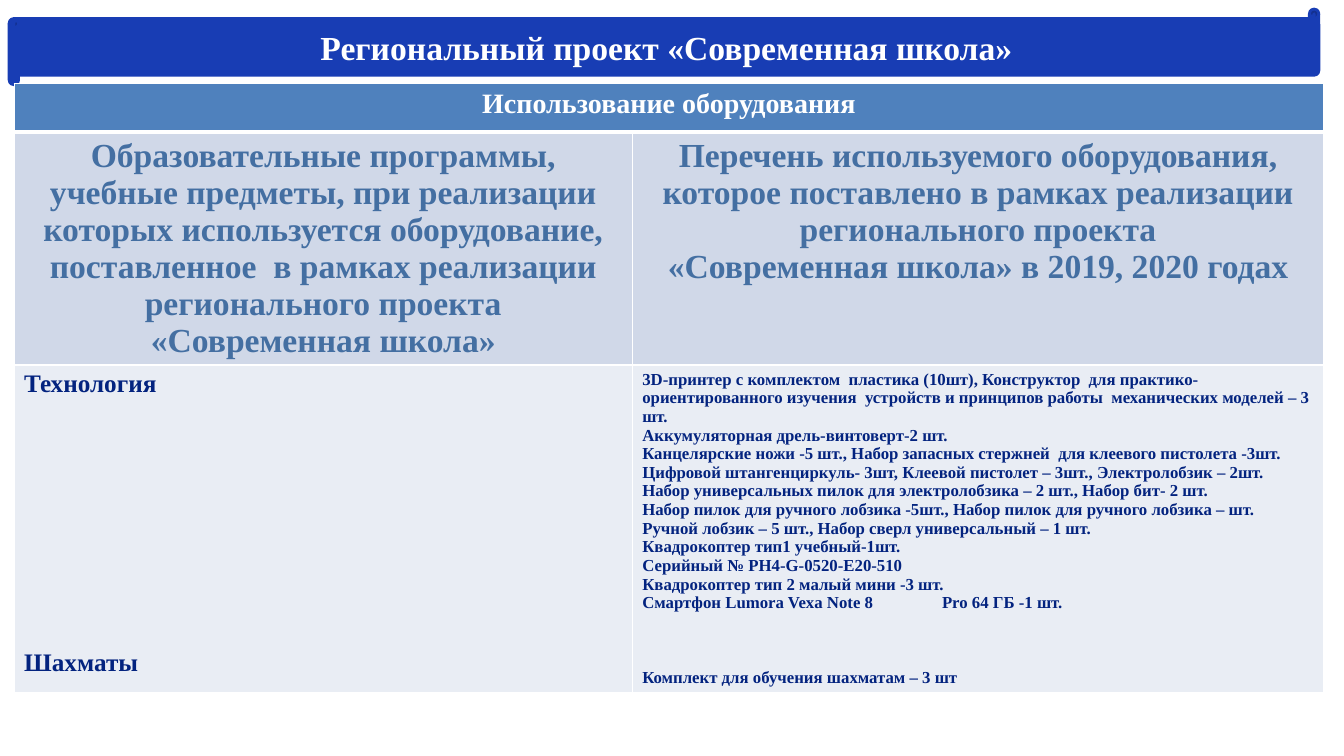
from lxml.etree import SubElement
from pptx import Presentation
from pptx.dml.color import RGBColor
from pptx.enum.shapes import MSO_SHAPE
from pptx.enum.text import MSO_ANCHOR, PP_ALIGN
from pptx.oxml import parse_xml
from pptx.oxml.ns import nsdecls, qn
from pptx.util import Inches, Pt


class Theme:
    font = "Times New Roman"
    banner, header, subheader, body = "183DB4", "4F81BD", "D0D8E8", "E9EDF4"
    white, heading_text, body_text = "FFFFFF", "446FA2", "03237F"
    title_size, header_size, subject_size, item_size = 24, 20, 18, 12


class SlideBuilder:
    """Lengths are percentages of the slide's width and height."""

    def __init__(self, prs, theme):
        self.prs, self.theme = prs, theme
        self.s = prs.slides.add_slide(prs.slide_layouts[6])

    def x(self, share):
        return int(self.prs.slide_width * share / 100)

    def y(self, share):
        return int(self.prs.slide_height * share / 100)

    def text(self, tf, lines, size, color, align=PP_ALIGN.LEFT):
        for i, line in enumerate(lines):
            p = tf.paragraphs[0] if i == 0 else tf.add_paragraph()
            p.text, p.alignment = line, align
            p.font.name, p.font.size, p.font.bold = self.theme.font, Pt(size), True
            p.font.color.rgb = RGBColor.from_string(color)

    def banner(self, left, top, width, height, title):
        t = self.theme
        sp = self.s.shapes.add_shape(MSO_SHAPE.HORIZONTAL_SCROLL, self.x(left),
                                     self.y(top), self.x(width), self.y(height))
        sp.shadow.inherit = False
        sp.fill.solid()
        sp.fill.fore_color.rgb = sp.line.color.rgb = RGBColor.from_string(t.banner)
        sp.line.width = Pt(2)
        sp.text_frame.vertical_anchor = MSO_ANCHOR.MIDDLE
        self.text(sp.text_frame, [title], t.title_size, t.white, PP_ALIGN.CENTER)

    def table(self, left, top, cols, rows):
        table = self.s.shapes.add_table(
            len(rows), len(cols), self.x(left), self.y(top),
            self.x(sum(cols)), self.y(sum(rows))).table
        for col, share in zip(table.columns, cols):
            col.width = self.x(share)
        for row, share in zip(table.rows, rows):
            row.height = self.y(share)
        return table

    def cell(self, cell, fill, bottom=1):
        cell.fill.solid()
        cell.fill.fore_color.rgb = RGBColor.from_string(fill)
        tc_pr = cell._tc.get_or_add_tcPr()
        for i, (side, width) in enumerate(zip("LRTB", (1, 1, 1, bottom))):
            tc_pr.insert(i, parse_xml(
                f'<a:ln{side} {nsdecls("a")} w="{Pt(width)}"><a:solidFill>'
                f'<a:srgbClr val="{self.theme.white}"/></a:solidFill></a:ln{side}>'))

    def tab_stop(self, p, share):
        p_pr = p._p.get_or_add_pPr()
        tabs = SubElement(p_pr, qn("a:tabLst"))
        SubElement(tabs, qn("a:tab"), pos=str(self.x(share)), algn="l")
        p_pr.insert_element_before(tabs, "a:defRPr")


TITLE = "Региональный проект «Современная школа»"
HEADER = "Использование оборудования"
SUBHEADERS = [
    ["Образовательные программы,",
     "учебные предметы, при реализации которых используется оборудование, "
     "поставленное  в рамках реализации регионального проекта",
     "«Современная школа»"],
    ["Перечень используемого оборудования, которое поставлено в рамках "
     "реализации регионального проекта",
     "«Современная школа» в 2019, 2020 годах"],
]
SUBJECTS = ["Технология", "Шахматы"]
PHONE = "Смартфон Lumora Vexa Note 8\tPro 64 ГБ -1 шт."
EQUIPMENT = [
    "3D-принтер с комплектом  пластика (10шт), Конструктор  для "
    "практико-ориентированного изучения  устройств и принципов работы  "
    "механических моделей – 3 шт.",
    "Аккумуляторная дрель-винтоверт-2 шт.",
    "Канцелярские ножи -5 шт., Набор запасных стержней  для клеевого пистолета -3шт.",
    "Цифровой штангенциркуль- 3шт, Клеевой пистолет – 3шт., Электролобзик – 2шт.",
    "Набор универсальных пилок для электролобзика – 2 шт., Набор бит- 2 шт.",
    "Набор пилок для ручного лобзика -5шт., Набор пилок для ручного лобзика – шт.",
    "Ручной лобзик – 5 шт., Набор сверл универсальный – 1 шт.",
    "Квадрокоптер тип1 учебный-1шт.",
    "Серийный № PH4-G-0520-E20-510",
    "Квадрокоптер тип 2 малый мини -3 шт.",
    PHONE,
    "Комплект для обучения шахматам – 3 шт",
]


def main():
    prs = Presentation()
    prs.slide_width, prs.slide_height = Inches(13.33), Inches(7.5)
    t = Theme()
    b = SlideBuilder(prs, t)

    # Title banner
    b.banner(0.68, 1.2, 97.45, 10, TITLE)

    # Table header across both columns
    table = b.table(1.05, 11.07, cols=(45.99, 51.46), rows=(6.4, 30.8, 43.2))
    table.cell(0, 0).merge(table.cell(0, 1))
    b.text(table.cell(0, 0).text_frame, [HEADER], t.header_size, t.white,
           PP_ALIGN.CENTER)

    # Column headings and cell styles
    for col, lines in enumerate(SUBHEADERS):
        b.cell(table.cell(0, col), t.header, bottom=3)
        b.cell(table.cell(1, col), t.subheader)
        b.cell(table.cell(2, col), t.body)
        b.text(table.cell(1, col).text_frame, lines, t.title_size,
               t.heading_text, PP_ALIGN.CENTER)

    # Subjects and equipment, with the chess entries set apart below
    contents = ((SUBJECTS, t.subject_size, 179), (EQUIPMENT, t.item_size, 40))
    for col, (lines, size, gap) in enumerate(contents):
        tf = table.cell(2, col).text_frame
        b.text(tf, lines, size, t.body_text)
        tf.paragraphs[-1].space_before = Pt(gap)
    b.tab_stop(tf.paragraphs[EQUIPMENT.index(PHONE)], 22.3)

    prs.save("out.pptx")


if __name__ == "__main__":
    main()
